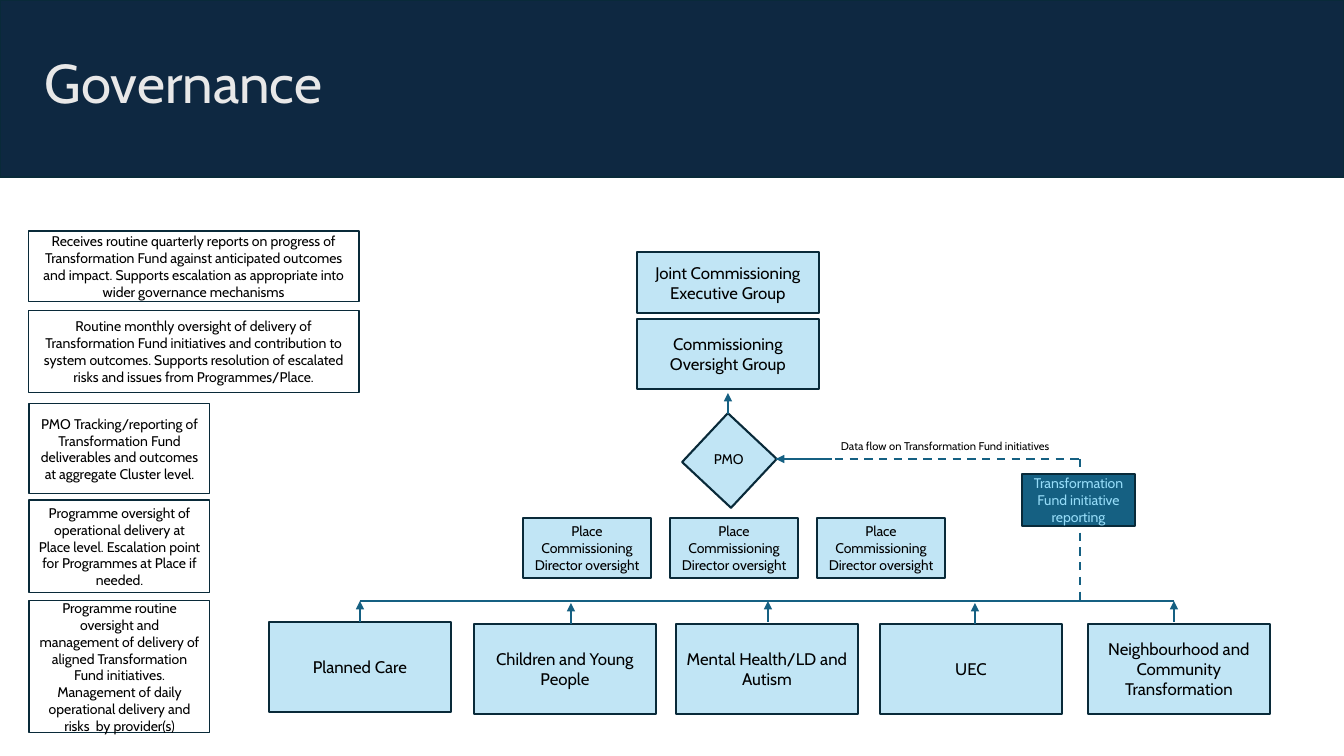
import pptx
import pptx.util
import pptx.dml.color
import pptx.enum.dml
import pptx.enum.shapes
import pptx.enum.text
import pptx.oxml.ns
import lxml.etree

EMU_PER_PX = 914400 / 100.8

THEME = {
    "font": "Cabin",
    "banner": "0E2841", "title": "E8E8E8",
    "outline": "092A39", "box": "C1E5F5", "text": "000000",
    "flow": "156082", "report_text": "96DCF8",
    "title_size": 39, "group_size": 12, "body_size": 10, "caption_size": 8,
    "thin": 0.75, "thick": 1.5,
}

deck = pptx.Presentation()
deck.slide_width = round(1344 * EMU_PER_PX)
deck.slide_height = round(756 * EMU_PER_PX)
page = deck.slides.add_slide(deck.slide_layouts[6])


def write_text(box, text, size, color="text", align="CENTER", anchor="MIDDLE", wrap=True):
    frame = box.text_frame
    frame.word_wrap = wrap
    frame.vertical_anchor = pptx.enum.text.MSO_ANCHOR[anchor]
    frame.text = text
    para = frame.paragraphs[0]
    para.alignment = pptx.enum.text.PP_ALIGN[align]
    para.font.name = THEME["font"]
    para.font.size = pptx.util.Pt(THEME[size])
    para.font.color.rgb = pptx.dml.color.RGBColor.from_string(THEME[color])
    return para


def add_item(kind, bounds, color, weight="thick", dashed=False, arrow=False):
    """Add a box (left, top, width, height) or a line (x1, y1, x2, y2)."""
    lengths = [round(value * EMU_PER_PX) for value in bounds]
    if kind == "line":
        item = page.shapes.add_connector(pptx.enum.shapes.MSO_CONNECTOR.STRAIGHT, *lengths)
        properties = item._element.spPr
        item.line.color.rgb = pptx.dml.color.RGBColor.from_string(THEME[color])
        if dashed:
            item.line.dash_style = pptx.enum.dml.MSO_LINE.DASH
        if arrow:
            line = item.line._get_or_add_ln()
            lxml.etree.SubElement(line, pptx.oxml.ns.qn("a:tailEnd"), type="triangle")
        lxml.etree.SubElement(properties, pptx.oxml.ns.qn("a:effectLst"))
    else:
        item = page.shapes.add_shape(pptx.enum.shapes.MSO_SHAPE.RECTANGLE, *lengths)
        item.shadow.inherit = False
        if color:
            item.fill.solid()
            item.fill.fore_color.rgb = pptx.dml.color.RGBColor.from_string(THEME[color])
        else:
            item.fill.background()
        item.line.color.rgb = pptx.dml.color.RGBColor.from_string(THEME["outline"])
    item.line.width = pptx.util.Pt(THEME[weight])
    return item


# Banner
add_item("box", (0, 0, 1344, 175 + 2), "banner")

# Role notes on the left
notes = [
    (28, 231, 331, 71, "Receives routine quarterly reports on progress of Transformation Fund against "
     "anticipated outcomes and impact. Supports escalation as appropriate into wider "
     "governance mechanisms"),
    (28, 310, 331, 83, "Routine monthly oversight of delivery of Transformation Fund initiatives and "
     "contribution to system outcomes. Supports resolution of escalated risks and issues "
     "from Programmes/Place."),
    (29, 404, 181, 90, "PMO Tracking/reporting of Transformation Fund deliverables and outcomes at "
     "aggregate Cluster level."),
    (29, 500, 181, 93, "Programme oversight of operational delivery at Place level. Escalation point "
     "for Programmes at Place if needed."),
    (29, 601, 181, 132, "Programme routine oversight and management of delivery of aligned "
     "Transformation Fund initiatives. Management of daily operational delivery and "
     "risks  by provider(s)"),
]
for *bounds, text in notes:
    write_text(add_item("box", bounds, None, "thin"), text, "body_size")

# Executive and oversight groups
groups = [
    (252, 61, "Joint Commissioning Executive Group"),
    (319, 70, "Commissioning Oversight Group"),
]
for top, height, text in groups:
    write_text(add_item("box", (637, top, 182, height), "box"), text, "group_size")

# Place directors
for column in range(3):
    director = add_item("box", (523 + 147 * column, 518, 128, 60), "box")
    write_text(director, "Place Commissioning Director oversight", "body_size")

# Programmes, each with an arrow up to the shared line
BUS_Y = 601
add_item("line", (360, BUS_Y, 1174, BUS_Y), "flow")
programmes = [
    (269, 622, 360, 622, 601, "Planned Care"),
    (474, 624, 571, 624, 603, "Children and Young People"),
    (676, 624, 768, 622, 601, "Mental Health/LD and Autism"),
    (880, 624, 975, 624, 603, "UEC"),
    (1088, 624, 1174, 622, 601, "Neighbourhood and Community Transformation"),
]
for left, top, arrow_x, arrow_start, arrow_end, text in programmes:
    programme = add_item("box", (left, top, 182, 90), "box")
    write_text(programme, text, "group_size")
    arrow = add_item("line", (arrow_x, arrow_start, arrow_x, arrow_end), "flow", arrow=True)
    if arrow_x == left + 182 / 2:
        arrow.begin_connect(programme, 0)

# PMO diamond and its flows
diamond = add_item("box", (696, 427, 67, 67), "box")
diamond.rotation = 313.1
add_item("line", (728, 414, 728, 393), "flow", arrow=True)
add_item("line", (776, 459, 1079, 459), "flow", dashed=True)
add_item("line", (1080, 459, 1080, BUS_Y), "flow", dashed=True)
add_item("line", (832, 459, 776, 459), "flow", arrow=True)
reporting = add_item("box", (1022, 474, 113, 52), "flow")
write_text(reporting, "Transformation Fund initiative reporting", "body_size", "report_text")

# Free-standing labels
labels = [
    (704, 446, 52, 27, "PMO", "body_size", "text", "TOP", False),
    (831, 434, 288, 24, "Data flow on Transformation Fund initiatives", "caption_size", "text", "TOP", True),
    (35, 37, 1272, 97, "Governance", "title_size", "title", "MIDDLE", True),
]
for *bounds, text, size, color, anchor, wrap in labels:
    label = page.shapes.add_textbox(*[round(value * EMU_PER_PX) for value in bounds])
    para = write_text(label, text, size, color, "LEFT", anchor, wrap)
    if size == "title_size":
        para.line_spacing = 0.9

deck.save("out.pptx")
